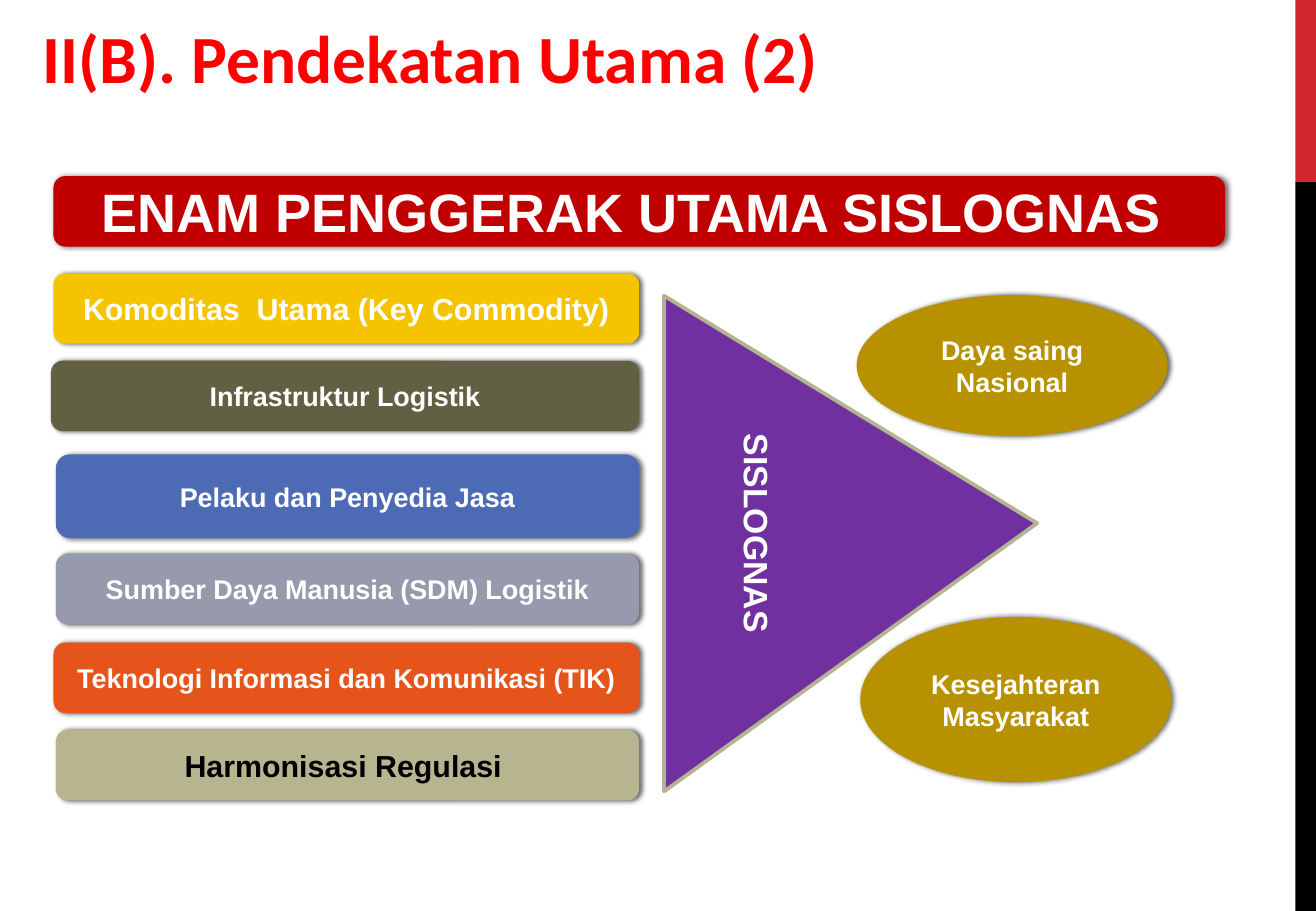
"""Build the slide on the six main drivers of Sislognas."""
from lxml.etree import SubElement
from pptx import Presentation
from pptx.dml.color import RGBColor
from pptx.enum.shapes import MSO_SHAPE
from pptx.enum.text import MSO_ANCHOR, MSO_AUTO_SIZE, PP_ALIGN
from pptx.oxml.ns import qn
from pptx.util import Inches, Pt

COLORS = {
    "white": "FFFFFF", "black": "000000", "title": "FF0000", "accent": "D1282E",
    "banner": "C00000", "yellow": "F6C300", "olive": "616042", "blue": "4D6BB5",
    "grey": "9799AD", "orange": "E5551B", "sand": "B6B590", "gold": "B89101",
    "purple": "7030A0", "outline": "B4B392",
}
WIDTH, HEIGHT = 10.83, 7.5
SIDEBAR_LEFT = 10.66
BANNER_LEFT = 0.44
DRIVER_RIGHT = 5.26
BAR_HEIGHT = 0.58

deck = Presentation()
deck.slide_width, deck.slide_height = Inches(WIDTH), Inches(HEIGHT)
page = deck.slides.add_slide(deck.slide_layouts[5])


def add_block(kind, left, top, width, height, fill, text="", size=16, ink="white"):
    """Add a filled shape with centred bold text."""
    block = page.shapes.add_shape(
        kind, Inches(left), Inches(top), Inches(width), Inches(height))
    block.shadow.inherit = False
    block.fill.solid()
    block.fill.fore_color.rgb = RGBColor.from_string(COLORS[fill])
    block.line.fill.background()
    frame = block.text_frame
    frame.text = text
    frame.word_wrap = True
    frame.vertical_anchor = MSO_ANCHOR.MIDDLE
    para = frame.paragraphs[0]
    para.alignment = PP_ALIGN.CENTER
    for span in para.runs:
        span.font.name, span.font.size, span.font.bold = "Arial", Pt(size), True
        span.font.color.rgb = RGBColor.from_string(COLORS[ink])
    return block


def add_shadow(block):
    """Give a block a soft shadow towards the right."""
    effects = block._element.spPr.find(qn("a:effectLst"))
    shadow = SubElement(effects, qn("a:outerShdw"), blurRad=str(Pt(3)),
                        dist=str(Pt(1.5)), dir="0", rotWithShape="0")
    color = SubElement(shadow, qn("a:srgbClr"), val=COLORS["black"])
    SubElement(color, qn("a:alpha"), val="60000")


title = page.shapes.title
title.left, title.top = Inches(0.25), Inches(0.08)
title.width, title.height = Inches(10.08), Inches(1.45)
title.text_frame.text = "II(B). Pendekatan Utama (2)"
title.text_frame.word_wrap = True
title.text_frame.auto_size = MSO_AUTO_SIZE.NONE
title.text_frame.vertical_anchor = MSO_ANCHOR.TOP
heading = title.text_frame.paragraphs[0]
heading.alignment = PP_ALIGN.LEFT
heading_font = heading.runs[0].font
heading_font.name, heading_font.size, heading_font.bold = "Calibri", Pt(40), True
heading_font.color.rgb = RGBColor.from_string(COLORS["title"])

for top, bottom, fill in [(0, HEIGHT / 5, "accent"), (HEIGHT / 5, HEIGHT, "black")]:
    add_block(MSO_SHAPE.RECTANGLE, SIDEBAR_LEFT, top,
              WIDTH - SIDEBAR_LEFT, bottom - top, fill)

drivers = [
    ("Komoditas  Utama (Key Commodity)", 0.44, 2.25, BAR_HEIGHT, "yellow", 18, "white"),
    ("Infrastruktur Logistik", 0.42, 2.97, BAR_HEIGHT, "olive", 16, "white"),
    ("Pelaku dan Penyedia Jasa", 0.46, 3.74, 0.69, "blue", 16, "white"),
    ("Sumber Daya Manusia (SDM) Logistik", 0.46, 4.56, BAR_HEIGHT, "grey", 16, "white"),
    ("Teknologi Informasi dan Komunikasi (TIK)", 0.44, 5.29, BAR_HEIGHT, "orange", 16, "white"),
    ("Harmonisasi Regulasi ", 0.46, 6.01, BAR_HEIGHT, "sand", 18, "black"),
]
for text, left, top, height, fill, size, ink in drivers:
    add_shadow(add_block(MSO_SHAPE.ROUNDED_RECTANGLE, left, top,
                         DRIVER_RIGHT - left, height, fill, text, size, ink))

goals = [
    ("Daya saing Nasional", 7.05, 2.43, 1.16),
    ("Kesejahteran Masyarakat", 7.08, 5.08, 1.36),
]
for text, left, top, height in goals:
    add_shadow(add_block(MSO_SHAPE.OVAL, left, top, 2.56, height, "gold", text))

triangle = add_block(MSO_SHAPE.ISOSCELES_TRIANGLE, 4.96, 2.94, 4.08, 3.07,
                     "purple", "SISLOGNAS", 20)
triangle.adjustments[0] = 0.459
triangle.rotation = 90
triangle.line.color.rgb = RGBColor.from_string(COLORS["outline"])
triangle.line.width = Pt(2.25)

add_shadow(add_block(MSO_SHAPE.ROUNDED_RECTANGLE, BANNER_LEFT, 1.45, 9.64, BAR_HEIGHT,
                     "banner", "ENAM PENGGERAK UTAMA SISLOGNAS ", 32))

deck.save("out.pptx")
